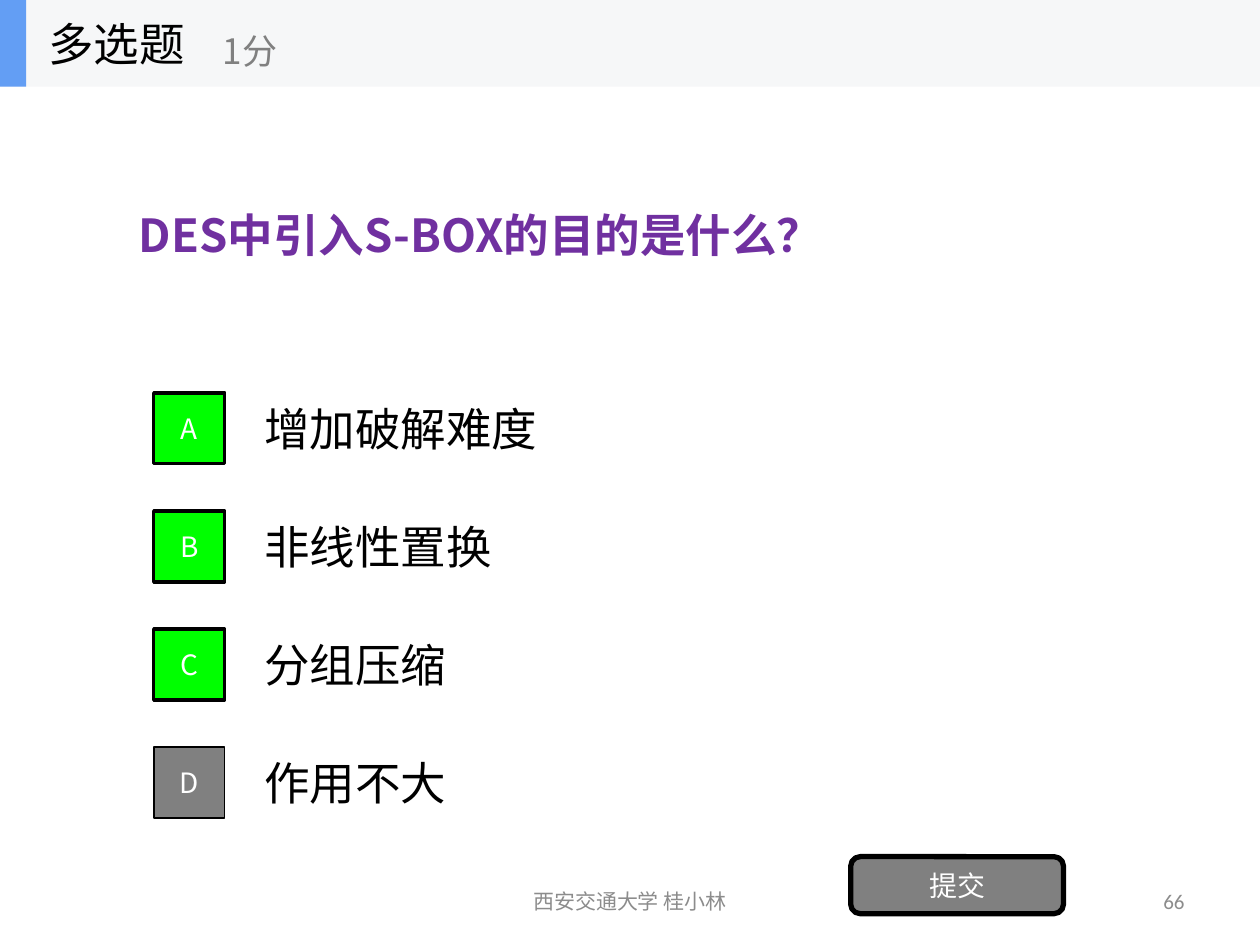
from lxml import etree
from pptx import Presentation
from pptx.dml.color import RGBColor
from pptx.enum.shapes import MSO_SHAPE
from pptx.enum.text import MSO_ANCHOR, MSO_AUTO_SIZE, PP_ALIGN
from pptx.oxml.ns import qn
from pptx.util import Cm, Pt

RECT, ROUND = MSO_SHAPE.RECTANGLE, MSO_SHAPE.ROUNDED_RECTANGLE
LEFT, CENTER, RIGHT = PP_ALIGN.LEFT, PP_ALIGN.CENTER, PP_ALIGN.RIGHT
MIDDLE, NO_FIT = MSO_ANCHOR.MIDDLE, MSO_AUTO_SIZE.NONE
CJK = "Noto Sans CJK SC"
COLORS = {"black": "000000", "white": "FFFFFF", "purple": "7030A0",
          "green": "00FF00", "gray": "808080", "footer": "8C8C8C",
          "bar": "F6F7F8", "accent": "639EF4"}


def write(sp, text, size=26, color="black", font=CJK, align=LEFT, bold=False):
    tf = sp.text_frame
    tf.word_wrap = True
    tf.auto_size = NO_FIT
    tf.vertical_anchor = MIDDLE
    p = tf.paragraphs[0]
    p.alignment = align
    r = p.add_run()
    r.text = text
    r.font.name = font
    r.font.size = Pt(size)
    r.font.bold = bold
    r.font.color.rgb = RGBColor.from_string(COLORS[color])
    etree.SubElement(r.font._element, qn("a:ea"), typeface=CJK)


def add_box(shapes, kind, left, top, width, height, fill, line=0):
    sp = shapes.add_shape(kind, Cm(left), Cm(top), Cm(width), Cm(height))
    sp.shadow.inherit = False
    sp.fill.solid()
    sp.fill.fore_color.rgb = RGBColor.from_string(COLORS[fill])
    if line:
        sp.line.color.rgb = RGBColor.from_string(COLORS["black"])
        sp.line.width = Pt(line)
    else:
        sp.line.fill.background()
    return sp


prs = Presentation()
prs.slide_width, prs.slide_height = Cm(25.4), Cm(19.05)
s = prs.slides.add_slide(prs.slide_layouts[5])

title = s.shapes.title
title.left, title.top, title.width, title.height = Cm(2.54), Cm(1.75), Cm(20.32), Cm(5.94)
write(title, "DES中引入S-BOX的目的是什么？", color="purple", bold=True)

options = [("A", "增加破解难度", True), ("B", "非线性置换", True),
           ("C", "分组压缩", True), ("D", "作用不大", False)]
for i, (letter, answer, correct) in enumerate(options):
    top = 7.75 + i * 2.38
    tb = s.shapes.add_textbox(Cm(5.08), Cm(top), Cm(17.78), Cm(1.78))
    write(tb, answer)
    fill, line = ("green", 2) if correct else ("gray", 1)
    sp = add_box(s.shapes, RECT, 3.1, top + 0.17, 1.43, 1.43, fill, line)
    write(sp, letter, size=16, color="white", align=CENTER)

submit = add_box(s.shapes, ROUND, 17.15, 17.27, 4.29, 1.15, "gray", 3)
write(submit, "提交", size=16, color="white", align=CENTER)

for text, left, width, align in [("西安交通大学 桂小林", 8.68, 8.04, CENTER),
                                 ("66", 18.2, 5.93, RIGHT)]:
    tb = s.shapes.add_textbox(Cm(left), Cm(17.66), Cm(width), Cm(1.01))
    write(tb, text, size=12, color="footer", font="Calibri", align=align)

header = s.shapes.add_group_shape()
add_box(header.shapes, RECT, 0, 0, 25.4, 1.75, "bar")
add_box(header.shapes, RECT, 0, 0, 0.53, 1.75, "accent")
tb = header.shapes.add_textbox(Cm(0.72), Cm(0), Cm(5.28), Cm(1.75))
write(tb, "多选题")
tb = header.shapes.add_textbox(Cm(4.24), Cm(0.3), Cm(6.35), Cm(1.42))
write(tb, "1分", size=20, color="gray")

prs.save("out.pptx")
